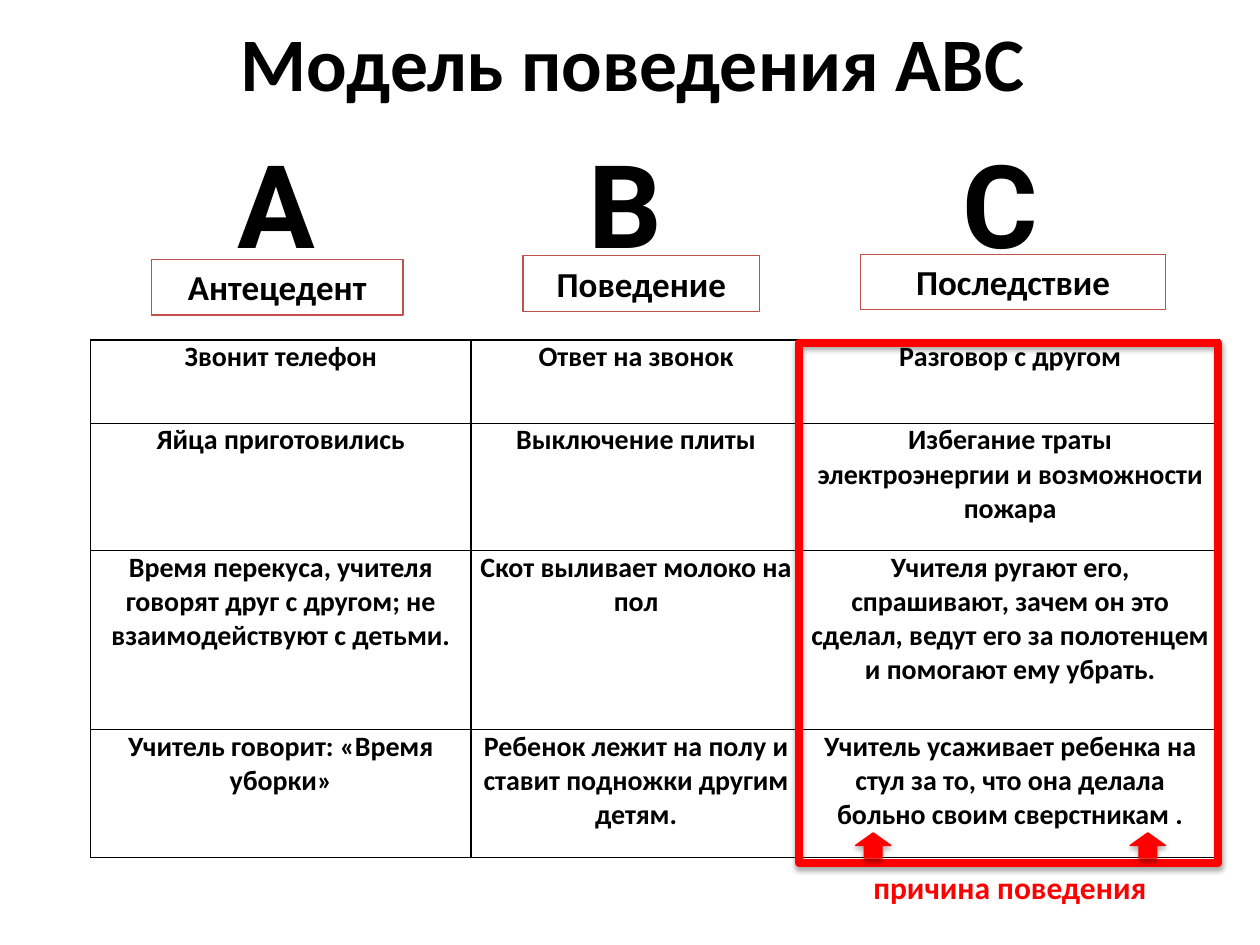
"""Build a slide that explains the ABC model of behaviour."""
from dataclasses import dataclass

from lxml import etree
from pptx import Presentation
from pptx.dml.color import RGBColor
from pptx.enum.shapes import MSO_SHAPE
from pptx.enum.text import MSO_ANCHOR, MSO_AUTO_SIZE, PP_ALIGN
from pptx.oxml.ns import qn
from pptx.util import Pt

BLACK = RGBColor(0x00, 0x00, 0x00)
RED = RGBColor(0xFF, 0x00, 0x00)
BRICK = RGBColor(0xC0, 0x50, 0x4D)
RECTANGLE = MSO_SHAPE.RECTANGLE
ARROW = MSO_SHAPE.RIGHT_ARROW
LEFT = PP_ALIGN.LEFT
CENTER = PP_ALIGN.CENTER
TOP = MSO_ANCHOR.TOP
MIDDLE = MSO_ANCHOR.MIDDLE
TITLE_ONLY = 5


@dataclass(frozen=True)
class Area:
    left: float
    top: float
    width: float
    height: float

    def lengths(self) -> tuple:
        return Pt(self.left), Pt(self.top), Pt(self.width), Pt(self.height)


@dataclass(frozen=True)
class Heading:
    letter: str
    letter_area: Area
    label: str
    label_area: Area


HEADINGS = (
    Heading("A", Area(128.9, 72.7, 77.8, 87.1), "Антецедент", Area(86.4, 148.3, 144, 31.7)),
    Heading("B", Area(329, 72.7, 66.2, 87.1), "Поведение", Area(298.8, 146.2, 135.4, 31.7)),
    Heading("C", Area(542.9, 72.7, 77.8, 87.1), "Последствие", Area(491.8, 145.4, 174.2, 31.7)),
)
COLUMN_WIDTHS = (217.4, 188.6, 239)
ROW_HEIGHTS = (47.5, 72.7, 102.2, 73.4)
EXAMPLES = (
    ("Звонит телефон", "Ответ на звонок", "Разговор с другом"),
    ("Яйца приготовились", "Выключение плиты",
     "Избегание траты электроэнергии и возможности пожара"),
    ("Время перекуса, учителя говорят друг с другом; не взаимодействуют с детьми.",
     "Скот выливает молоко на пол",
     "Учителя ругают его, спрашивают, зачем он это сделал, "
     "ведут его за полотенцем и помогают ему убрать."),
    ("Учитель говорит: «Время уборки»",
     "Ребенок лежит на полу и ставит подножки другим детям.",
     "Учитель усаживает ребенка на стул за то, что она делала "
     "больно своим сверстникам ."),
)
ARROW_LEFTS = (491.8, 648.7)


def write_text(frame, text: str, *, size: float, font: str = "Calibri",
               color: RGBColor = BLACK, align=CENTER) -> None:
    frame.word_wrap = True
    para = frame.paragraphs[0]
    para.alignment = align
    span = para.add_run()
    span.text = text
    span.font.name = font
    span.font.size = Pt(size)
    span.font.bold = True
    span.font.color.rgb = color


def add_text(page, area: Area, text: str, **text_format) -> None:
    box = page.shapes.add_textbox(*area.lengths())
    box.text_frame.auto_size = MSO_AUTO_SIZE.SHAPE_TO_FIT_TEXT
    write_text(box.text_frame, text, **text_format)


def add_outline(page, kind, area: Area, color: RGBColor, width: float):
    shape = page.shapes.add_shape(kind, *area.lengths())
    shape.shadow.inherit = False
    shape.fill.background()
    shape.line.color.rgb = color
    shape.line.width = Pt(width)
    return shape


def add_shadow(shape) -> None:
    effects = shape._element.spPr.find(qn("a:effectLst"))
    shadow = etree.SubElement(effects, qn("a:outerShdw"), blurRad=str(Pt(3.1)),
                              dist=str(Pt(1.8)), dir="5400000", rotWithShape="0")
    color = etree.SubElement(shadow, qn("a:srgbClr"), val=str(BLACK))
    etree.SubElement(color, qn("a:alpha"), val="35000")


def add_heading(page, heading: Heading) -> None:
    add_text(page, heading.letter_area, heading.letter, size=66, font="Roboto", align=LEFT)
    label = add_outline(page, RECTANGLE, heading.label_area, BRICK, 0.75)
    label.text_frame.vertical_anchor = TOP
    write_text(label.text_frame, heading.label, size=20)


def set_borders(cell) -> None:
    properties = cell._tc.get_or_add_tcPr()
    for position, side in enumerate(("a:lnL", "a:lnR", "a:lnT", "a:lnB")):
        line = etree.Element(qn(side), w=str(Pt(1)))
        fill = etree.SubElement(line, qn("a:solidFill"))
        etree.SubElement(fill, qn("a:srgbClr"), val=str(BLACK))
        properties.insert(position, line)


def add_examples(page) -> None:
    area = Area(51.8, 194.4, sum(COLUMN_WIDTHS), sum(ROW_HEIGHTS))
    table = page.shapes.add_table(len(ROW_HEIGHTS), len(COLUMN_WIDTHS), *area.lengths()).table
    table.first_row = table.horz_banding = False
    for column, width in zip(table.columns, COLUMN_WIDTHS):
        column.width = Pt(width)
    for row, height, texts in zip(table.rows, ROW_HEIGHTS, EXAMPLES):
        row.height = Pt(height)
        for cell, text in zip(row.cells, texts):
            cell.margin_left = cell.margin_right = Pt(5)
            cell.margin_top = cell.margin_bottom = 0
            cell.fill.background()
            set_borders(cell)
            write_text(cell.text_frame, text, size=16)


def add_cause(page) -> None:
    add_shadow(add_outline(page, RECTANGLE, Area(456.5, 195.8, 239.8, 297.4), RED, 4.5))
    add_text(page, Area(471.6, 492.5, 211, 28.8), "причина поведения", size=18, color=RED)
    for left in ARROW_LEFTS:
        arrow = add_outline(page, ARROW, Area(left, 473, 14.4, 20.2), RED, 0.75)
        arrow.rotation = 270
        arrow.fill.solid()
        arrow.fill.fore_color.rgb = RED
        add_shadow(arrow)


def main() -> None:
    deck = Presentation()
    deck.slide_width, deck.slide_height = Pt(720), Pt(540)
    page = deck.slides.add_slide(deck.slide_layouts[TITLE_ONLY])
    title = page.shapes.title
    title.left, title.top, title.width, title.height = Area(55.4, 5, 612, 59.8).lengths()
    title.text_frame.vertical_anchor = MIDDLE
    write_text(title.text_frame, "Модель поведения ABC", size=43.2)
    for heading in HEADINGS:
        add_heading(page, heading)
    add_examples(page)
    add_cause(page)
    deck.save("out.pptx")


if __name__ == "__main__":
    main()
